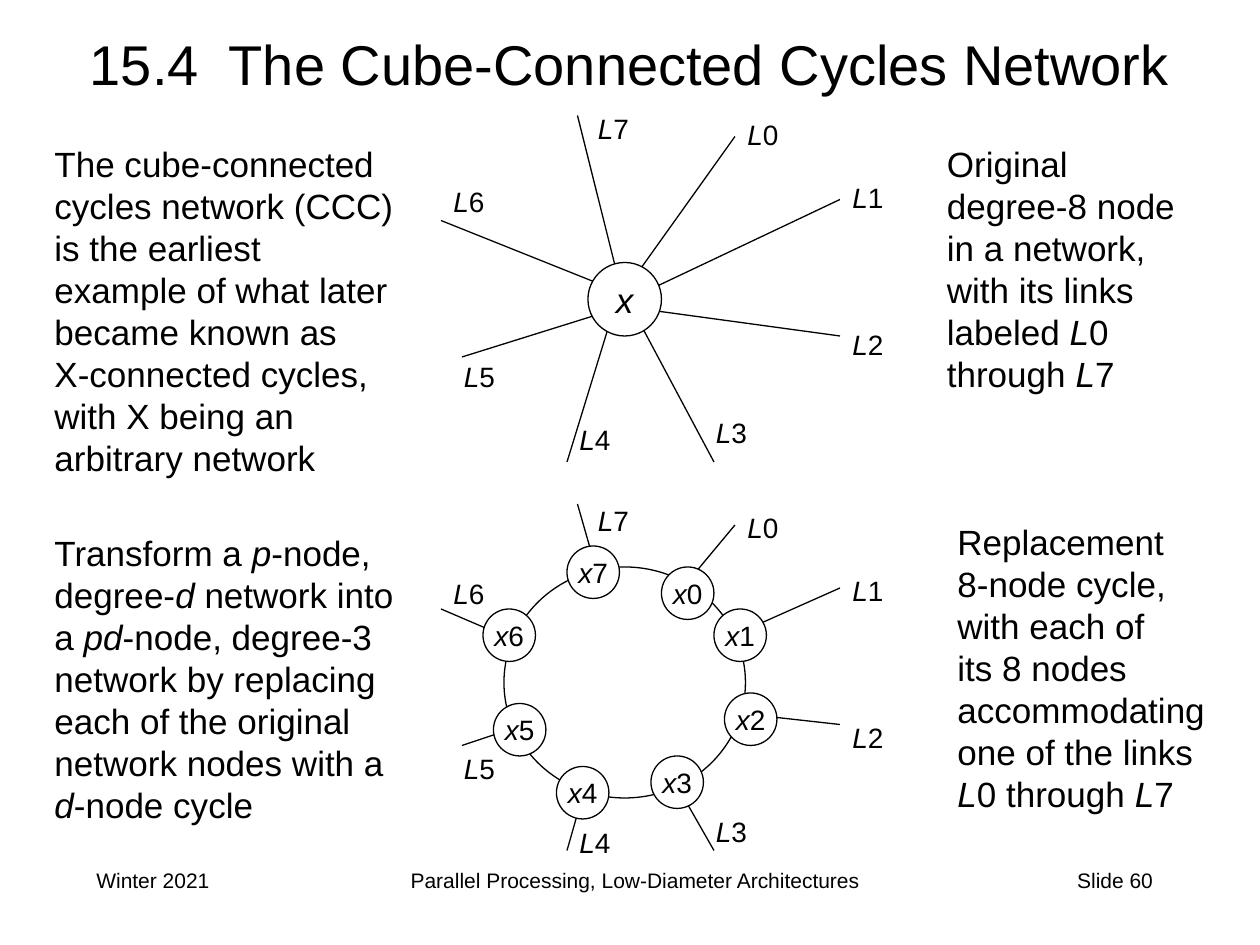
"""Builds the slide on the cube-connected cycles network."""
from dataclasses import dataclass
from typing import Optional

from lxml import etree
from pptx import Presentation, util as u
from pptx.dml.color import RGBColor
from pptx.enum import shapes, text
from pptx.oxml.ns import qn

COLUMNS, ROWS = 120, 90
INK = RGBColor(0x00, 0x00, 0x00)
PAPER = RGBColor(0xFF, 0xFF, 0xFF)
FONT = "Arial"
LEFT, CENTER, RIGHT = text.PP_ALIGN.LEFT, text.PP_ALIGN.CENTER, text.PP_ALIGN.RIGHT
MIDDLE = text.MSO_ANCHOR.MIDDLE
FIT, FIXED = text.MSO_AUTO_SIZE.SHAPE_TO_FIT_TEXT, text.MSO_AUTO_SIZE.NONE
CYCLE_DROP = 37

prs = Presentation()
prs.slide_width, prs.slide_height = u.Inches(10), u.Inches(7.5)
slide = prs.slides.add_slide(prs.slide_layouts[5])


@dataclass(frozen=True)
class Link:
    """One link of the node: its outer tip, its roots and its two labels, in grid cells."""
    tip: tuple[int, int]
    hub_root: tuple[int, int]
    cycle_root: tuple[int, int]
    cycle_node: tuple[int, int]
    label_column: float
    hub_label_row: float
    cycle_label_row: float


@dataclass(frozen=True)
class Passage:
    """A block of text on the grid; asterisks enclose italics."""
    column: float
    row: float
    width: float
    height: float
    paragraphs: tuple[str, ...]
    size: int = 20
    align: text.PP_ALIGN = LEFT
    wrap: bool = True
    grow: bool = True


LINKS = [
    Link((70, 13), (60, 27), (65, 56), (63, 54), 70, 10.6, 48),
    Link((80, 19), (61, 28), (71, 60), (68, 58), 80, 16.6, 54),
    Link((80, 32), (58, 29), (71, 68), (69, 66), 80, 30.6, 68),
    Link((68, 44), (60, 29), (64, 74), (62, 72), 67, 39, 77),
    Link((54, 44), (58, 31), (56, 74), (53, 73), 54, 39.65, 78),
    Link((44, 34), (60, 29), (50, 69), (47, 67), 43, 33.65, 71),
    Link((42, 21), (57, 27), (49, 61), (46, 58), 42, 17, 54.35),
    Link((55, 11), (59, 27), (57, 55), (54, 52), 55.75, 10, 47.4),
]
PASSAGES = [
    Passage(4, 13, 35.2, 33.2, (
        "The cube-connected cycles network (CCC) is the earliest example of what later became known as",
        "X-connected cycles, with X being an arbitrary network")),
    Passage(4, 50, 35.2, 29.2, (
        "Transform a *p*-node, degree-*d* network into a *pd*-node, degree-3 network by replacing "
        "each of the original network nodes with a *d*-node cycle",)),
    Passage(89, 13, 26, 25.2, (
        "Original degree-8 node in a network, with its links labeled *L*0 through *L*7",)),
    Passage(90, 49, 26, 29.2, (
        "Replacement", "8-node cycle, with each of",
        "its 8 nodes accommodating one of the links *L*0 through *L*7")),
    Passage(8, 82, 25, 6, ("Winter 2021",), 12, grow=False),
    Passage(29, 82, 63, 6, ("Parallel Processing, Low-Diameter Architectures",), 12, CENTER, grow=False),
    Passage(86, 82, 25, 6, ("Slide 60",), 12, RIGHT, grow=False),
]


def across(columns: float) -> int:
    """Turn grid columns into a length."""
    return round(prs.slide_width * columns / COLUMNS)


def down(rows: float) -> int:
    """Turn grid rows into a length."""
    return round(prs.slide_height * rows / ROWS)


def write(frame, paragraphs: tuple[str, ...], size: int, align: text.PP_ALIGN) -> None:
    """Fill a text frame with formatted paragraphs."""
    for index, line in enumerate(paragraphs):
        paragraph = frame.add_paragraph() if index else frame.paragraphs[0]
        paragraph.alignment = align
        for part, words in enumerate(line.split("*")):
            if words:
                run = paragraph.add_run()
                run.text = words
                run.font.size, run.font.name = u.Pt(size), FONT
                run.font.italic = part % 2 == 1
                run.font.color.rgb = INK


def add_passage(passage: Passage) -> None:
    """Place a passage as a text box."""
    frame = slide.shapes.add_textbox(across(passage.column), down(passage.row),
                                     across(passage.width), down(passage.height)).text_frame
    frame.word_wrap = passage.wrap
    frame.auto_size = FIT if passage.grow else FIXED
    write(frame, passage.paragraphs, passage.size, passage.align)


def add_link(root: tuple[int, int], tip: tuple[int, int]) -> None:
    """Draw a link from its root to its tip."""
    link = slide.shapes.add_connector(shapes.MSO_CONNECTOR.STRAIGHT, across(root[0]), down(root[1]),
                                      across(tip[0]), down(tip[1]))
    link.line.color.rgb, link.line.width = INK, u.Pt(0.75)
    etree.SubElement(link._element.spPr, qn("a:effectLst"))


def add_node(corner: tuple[int, int], width: int, height: int,
             name: Optional[str] = None, size: int = 16) -> None:
    """Draw an outlined ellipse with an optional name."""
    node = slide.shapes.add_shape(shapes.MSO_SHAPE.OVAL, across(corner[0]), down(corner[1]),
                                  across(width), down(height))
    node.shadow.inherit = False
    node.fill.solid()
    node.fill.fore_color.rgb = PAPER
    node.line.color.rgb, node.line.width = INK, u.Pt(0.75)
    if name:
        node.text_frame.word_wrap = False
        node.text_frame.vertical_anchor = MIDDLE
        write(node.text_frame, (name,), size, CENTER)


def add_label(number: int, column: float, row: float) -> None:
    """Name a link."""
    add_passage(Passage(column, row, 5.4, 4.4, (f"*L*{number}",), 16, wrap=False))


def draw_original_node() -> None:
    """Draw the degree-8 node with its links."""
    for number, link in enumerate(LINKS):
        add_link(link.hub_root, link.tip)
        add_label(number, link.label_column, link.hub_label_row)
    add_node((56, 25), 7, 7, "*x*", 20)


def draw_replacement_cycle() -> None:
    """Draw the 8-node cycle that takes over the links."""
    add_node((48, 54), 23, 22)
    for link in LINKS:
        add_link(link.cycle_root, (link.tip[0], link.tip[1] + CYCLE_DROP))
    for number, link in enumerate(LINKS):
        add_node(link.cycle_node, 5, 5, f"*x*{number}")
        add_label(number, link.label_column, link.cycle_label_row)


def main() -> None:
    """Build and save the slide."""
    title = slide.shapes.title
    title.left, title.top, title.width, title.height = across(3), down(2), across(114), down(8)
    title.text_frame.auto_size = FIXED
    title.text_frame.vertical_anchor = MIDDLE
    write(title.text_frame, ("15.4  The Cube-Connected Cycles Network",), 32, CENTER)

    for passage in PASSAGES:
        add_passage(passage)
    draw_original_node()
    draw_replacement_cycle()
    prs.save("out.pptx")


if __name__ == "__main__":
    main()
